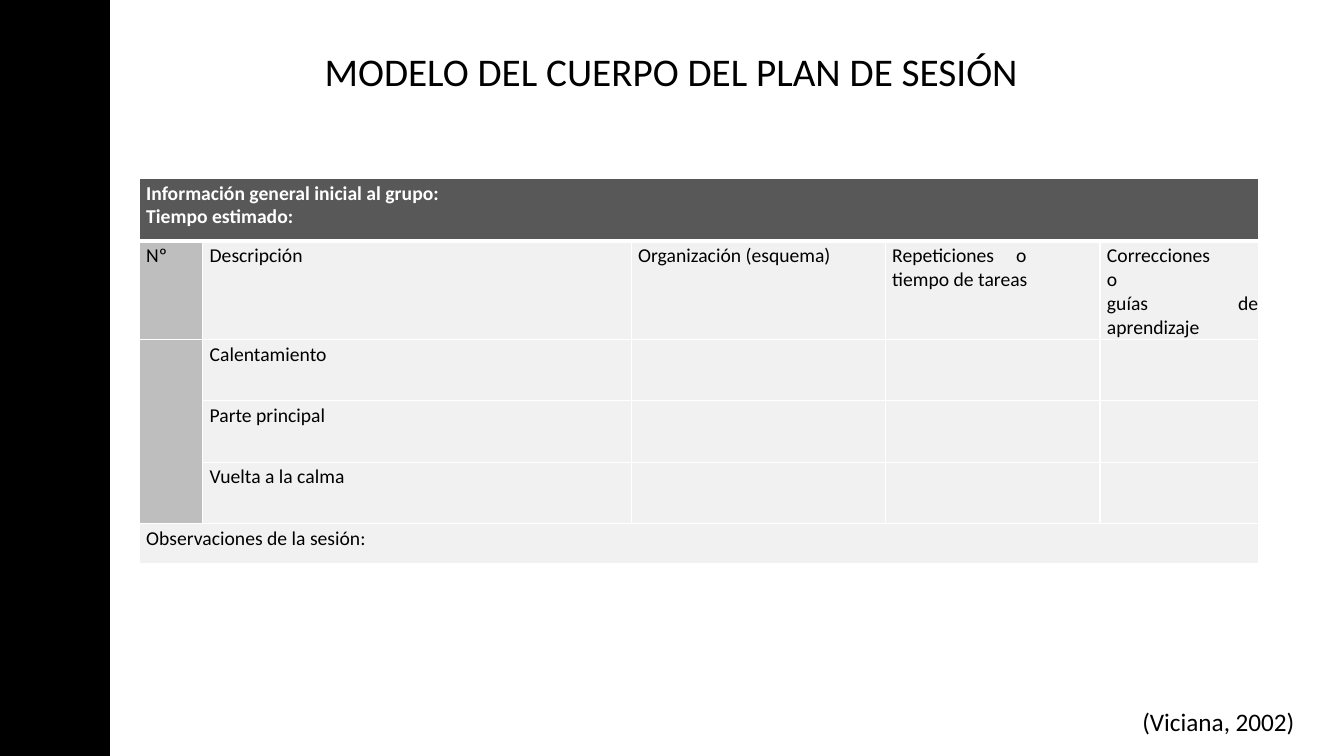
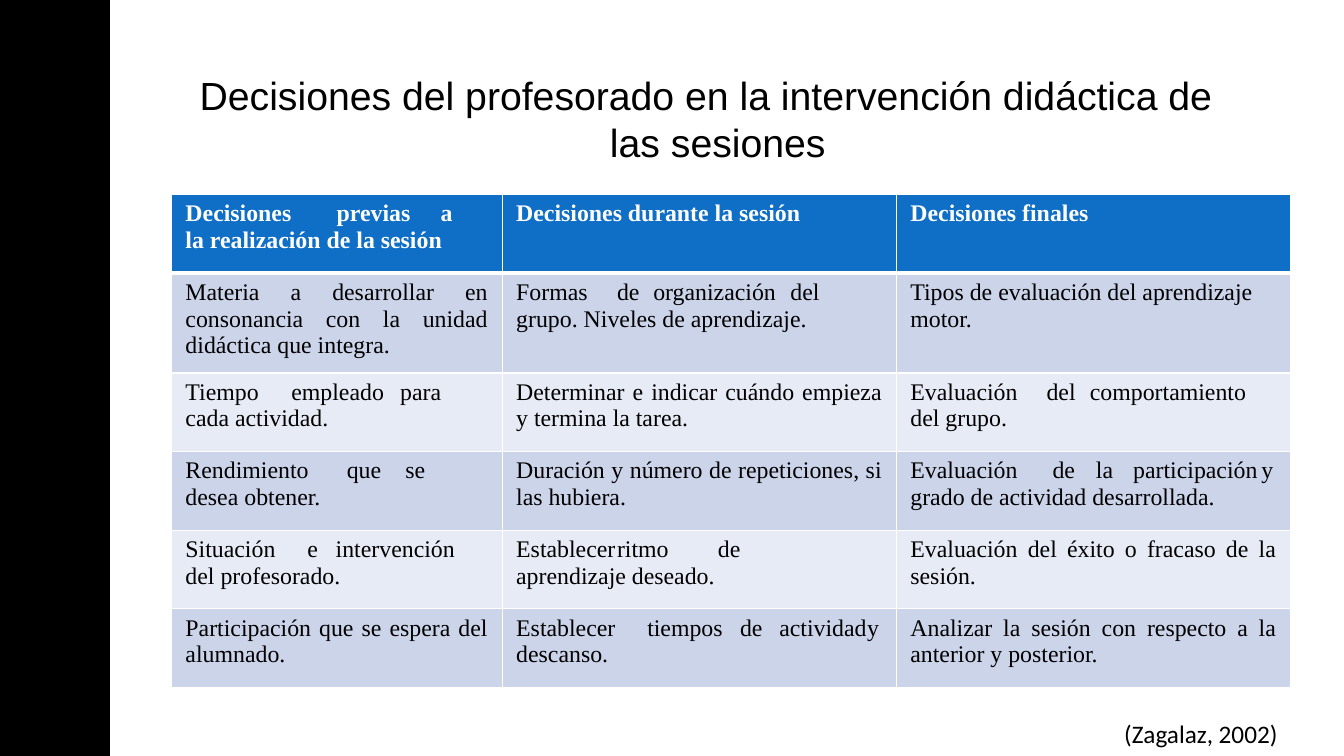
from copy import deepcopy

from lxml.etree import SubElement
from pptx import Presentation
from pptx.dml.color import RGBColor
from pptx.enum.shapes import MSO_SHAPE as SHAPE
from pptx.enum.text import MSO_ANCHOR as ANCHOR, MSO_AUTO_SIZE as AUTO, PP_ALIGN as ALIGN
from pptx.oxml.ns import qn
from pptx.util import Inches, Pt

BLACK = RGBColor(0x00, 0x00, 0x00)
WHITE = RGBColor(0xFF, 0xFF, 0xFF)
DARK_GREY = RGBColor(0x58, 0x58, 0x58)
MID_GREY = RGBColor(0xBE, 0xBE, 0xBE)
LIGHT_GREY = RGBColor(0xF1, 0xF1, 0xF1)
BLUE = RGBColor(0x0F, 0x6E, 0xC5)
BLUE_BANDS = RGBColor(0xCC, 0xD4, 0xEA), RGBColor(0xE7, 0xEB, 0xF5)

PLAN_ROWS = [
    ["Información general inicial al grupo:\vTiempo estimado:"],
    ["Nº", "Descripción", "Organización (esquema)",
     ("Repeticiones\to\vtiempo de tareas", 1.23),
     ("Correcciones\vo\nguías\tde\naprendizaje", 1.3)],
    ["", "Calentamiento"],
    ["", "Parte principal"],
    ["", "Vuelta a la calma"],
    ["Observaciones de la sesión:"],
]

DECISION_ROWS = [
    [("Decisiones\tprevias\ta\vla realización de la sesión", 1.5, 2.53),
     "Decisiones durante la sesión",
     "Decisiones finales"],
    ["Materia a desarrollar en consonancia con la unidad didáctica que integra.",
     ("Formas\tde\torganización\tdel\vgrupo. Niveles de aprendizaje.", 1, 1.36, 2.72),
     "Tipos de evaluación del aprendizaje\vmotor."],
    [("Tiempo\templeado\tpara\vcada actividad.", 1.05, 2.13),
     "Determinar e indicar cuándo empieza y termina la tarea.",
     ("Evaluación\tdel\tcomportamiento\vdel grupo.", 1.35, 1.78)],
    [("Rendimiento\tque\tse\vdesea obtener.", 1.6, 2.18),
     "Duración y número de repeticiones, si las hubiera.",
     ("Evaluación\tde\tla\tparticipación\ty\vgrado de actividad desarrollada.",
      1.41, 1.84, 2.21, 3.48)],
    [("Situación\te\tintervención\vdel profesorado.", 1.21, 1.49),
     ("Establecer\tritmo\tde\vaprendizaje deseado.", 1, 2),
     "Evaluación del éxito o fracaso de la sesión."],
    ["Participación que se espera del alumnado.",
     ("Establecer\ttiempos\tde\tactividad\ty\vdescanso.", 1.3, 2.22, 2.61, 3.48),
     "Analizar la sesión con respecto a la anterior y posterior."],
]


def write(tf, text, font="Calibri", size=14, color=BLACK, bold=False, tabs=(),
          align=ALIGN.LEFT, hang=None):
    for i, line in enumerate(text.split("\n")):
        p = tf.paragraphs[0] if i == 0 else tf.add_paragraph()
        p.text = line
        p.alignment = align
        p.space_before = Pt(0)
        pPr = p._p.get_or_add_pPr()
        if hang:
            pPr.set("marL", str(Inches(hang)))
            pPr.set("indent", str(-Inches(hang)))
        if tabs:
            tab_list = SubElement(pPr, qn("a:tabLst"))
            for pos in tabs:
                SubElement(tab_list, qn("a:tab"), pos=str(Inches(pos)), algn="l")
        for r in p.runs:
            r.font.name = font
            r.font.size = Pt(size)
            r.font.bold = bold
            r.font.color.rgb = color
        for br in p._p.findall(qn("a:br")):
            br.insert(0, deepcopy(p.runs[0]._r.rPr))


def format_box(sp, box):
    sp.left, sp.top, sp.width, sp.height = map(Inches, box)
    tf = sp.text_frame
    tf.word_wrap = True
    tf.auto_size = AUTO.NONE
    tf.vertical_anchor = ANCHOR.TOP
    tf.margin_left = tf.margin_top = Inches(0.01)
    tf.margin_right = tf.margin_bottom = 0
    return tf


def add_title(s, box, text, **fmt):
    write(format_box(s.shapes.title, box), text, size=28, **fmt)


def add_citation(s, box, text):
    sp = s.shapes.add_textbox(*map(Inches, box))
    write(format_box(sp, box), text, size=18)


def set_borders(cell, top=1, bottom=1):
    tcPr = cell._tc.get_or_add_tcPr()
    sides = ("a:lnL", 1), ("a:lnR", 1), ("a:lnT", top), ("a:lnB", bottom)
    for i, (tag, width) in enumerate(sides):
        ln = SubElement(tcPr, qn(tag), w=str(Pt(width)))
        fill = SubElement(ln, qn("a:solidFill"))
        SubElement(fill, qn("a:srgbClr"), val=str(WHITE))
        tcPr.insert(i, ln)


def add_grid(s, left, top, cols, heights, rows, fill_of, merges=(), pad=0.07,
             pad_top=0.03, pad_right=0, wrap_align=ALIGN.LEFT, **fmt):
    frame = s.shapes.add_table(len(heights), len(cols), Inches(left), Inches(top),
                               Inches(sum(cols)), Inches(sum(heights)))
    table = frame.table
    table.first_row = table.horz_banding = False
    for col, width in zip(table.columns, cols):
        col.width = Inches(width)
    for row, height in zip(table.rows, heights):
        row.height = Inches(height)
    for i, entries in enumerate(rows):
        for j in range(len(cols)):
            cell = table.cell(i, j)
            cell.fill.solid()
            cell.fill.fore_color.rgb = fill_of(i, j)
            set_borders(cell, top=3 if i == 1 else 1, bottom=3 if i == 0 else 1)
            cell.margin_left, cell.margin_right = Inches(pad), Inches(pad_right)
            cell.margin_top, cell.margin_bottom = Inches(pad_top), 0
            entry = entries[j] if j < len(entries) else ""
            text, *tabs = entry if isinstance(entry, tuple) else (entry,)
            if text:
                write(cell.text_frame, text, tabs=tabs, bold=i == 0,
                      color=WHITE if i == 0 else BLACK,
                      align=ALIGN.LEFT if "\v" in text else wrap_align, **fmt)
    for first, last in merges:
        table.cell(*first).merge(table.cell(*last))


def plan_fill(i, j):
    if i == 0:
        return DARK_GREY
    return MID_GREY if j == 0 and i < 5 else LIGHT_GREY


def decision_fill(i, j):
    return BLUE if i == 0 else BLUE_BANDS[(i - 1) % 2]


def add_sidebar(s, layout):
    sp = s.shapes.add_shape(SHAPE.RECTANGLE, 0, 0, Inches(1.08), Inches(7.5))
    sp.shadow.inherit = False
    sp.fill.solid()
    sp.fill.fore_color.rgb = BLACK
    sp.line.color.rgb = BLACK
    sp.line.width = Pt(1)
    layout.element.cSld.spTree.insert(2, sp.element)


def build_plan(s):
    add_title(s, (3.21, 0.46, 7.2, 0.49), "MODELO DEL CUERPO DEL PLAN DE SESIÓN")
    add_grid(s, 1.38, 1.77, [0.63, 4.25, 2.52, 2.13, 1.57],
             [0.62, 0.96, 0.61, 0.61, 0.61, 0.4], PLAN_ROWS, plan_fill,
             merges=[((0, 0), (0, 4)), ((2, 0), (4, 0)), ((5, 0), (5, 4))])
    add_citation(s, (11.32, 7, 1.7, 0.33), "(Viciana, 2002)")


def build_decisions(s):
    add_title(s, (1.97, 0.7, 10.1, 0.96),
              "Decisiones del profesorado en la intervención didáctica de las sesiones",
              font="Arial", hang=4.07)
    add_grid(s, 1.7, 1.93, [3.28, 3.91, 3.91], [0.78, 0.99] + [0.78] * 4,
             DECISION_ROWS, decision_fill, pad=0.14, pad_top=0.06, pad_right=0.14,
             wrap_align=ALIGN.JUSTIFY, font="Times New Roman", size=17)
    add_citation(s, (11.14, 7.12, 1.7, 0.33), "(Zagalaz, 2002)")


def main():
    prs = Presentation()
    prs.slide_width, prs.slide_height = Inches(13.33), Inches(7.5)
    layout = prs.slide_layouts[5]
    slides = [prs.slides.add_slide(layout) for _ in range(2)]
    add_sidebar(slides[0], layout)
    build_plan(slides[0])
    build_decisions(slides[1])
    prs.save("out.pptx")


if __name__ == "__main__":
    main()
